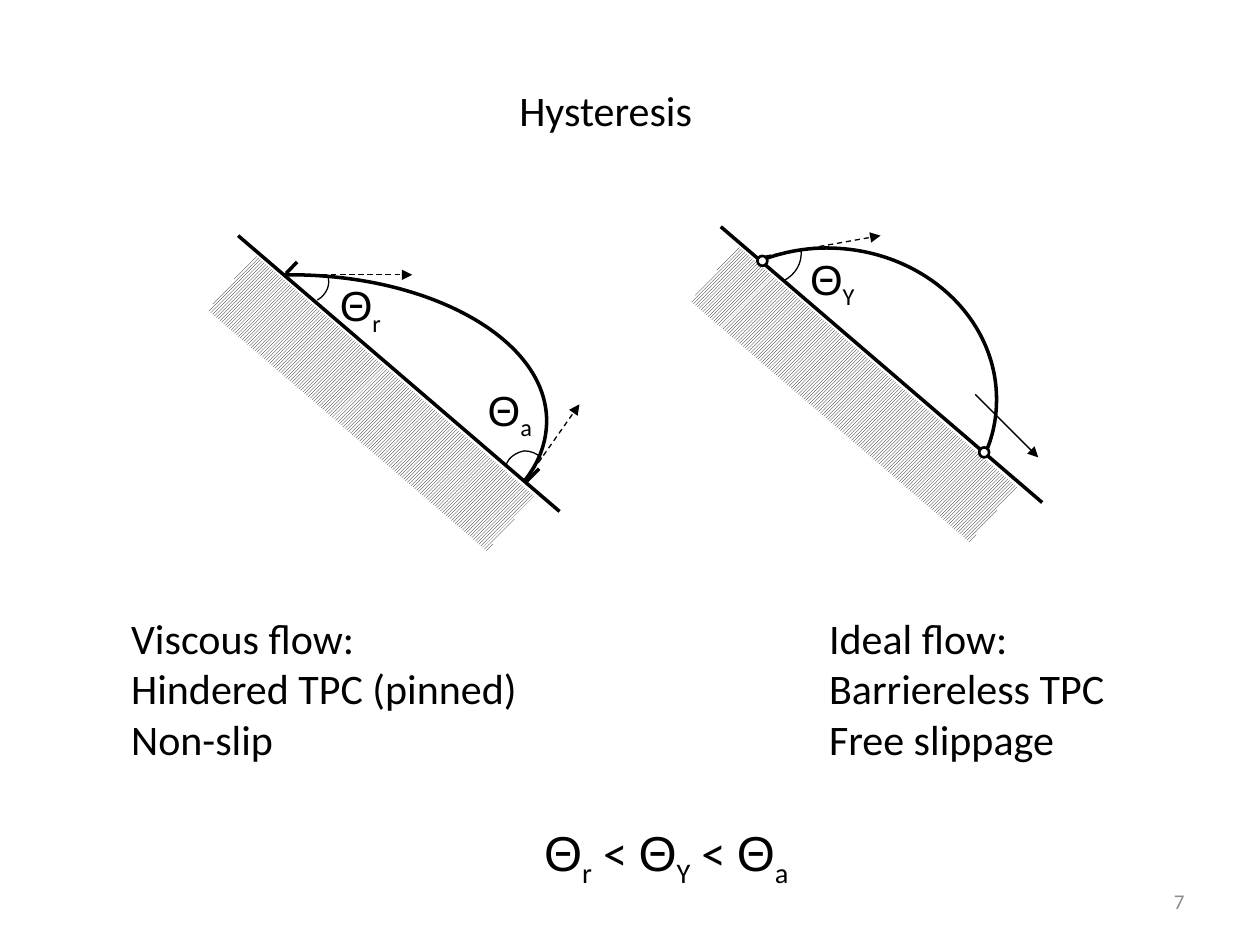
"""Build the contact angle hysteresis slide."""
from dataclasses import dataclass

from lxml.etree import SubElement
from pptx import Presentation
from pptx.dml.color import RGBColor
from pptx.enum.dml import MSO_LINE, MSO_PATTERN
from pptx.enum.shapes import MSO_CONNECTOR as CONN, MSO_SHAPE as SHAPE
from pptx.enum.text import MSO_ANCHOR as ANCHOR, MSO_AUTO_SIZE as FIT, PP_ALIGN as ALIGN
from pptx.oxml.ns import qn
from pptx.util import Cm, Pt

BLACK, WHITE, GREY = "000000", "FFFFFF", "8C8C8C"
THICK, THIN = 2, 0.75
RING = 0.2


@dataclass
class Line:
    start: tuple[float, float]
    end: tuple[float, float]
    width: float = THICK
    dashed: bool = False
    arrow: bool = False


@dataclass
class Curve:
    points: list[tuple[float, float]]
    width: float = THICK


@dataclass
class Label:
    sub: str
    x: float
    y: float


@dataclass
class Drop:
    shift: tuple[float, float]
    curves: list[Curve]
    lines: list[Line]
    labels: list[Label]
    rings: list[tuple[float, float]]


DROPS = [
    Drop(
        (0, 0),
        [
            Curve([(5.72, 5.54), (5.77, 5.54), (5.79, 5.54), (5.84, 5.54),
                   (8.71, 5.54), (11.02, 6.86), (11.02, 8.48),
                   (11.02, 8.92), (10.87, 9.32), (10.57, 9.7)]),
            Curve([(6.4, 6.05), (6.58, 5.94), (6.68, 5.74), (6.6, 5.54)], THIN),
            Curve([(10.21, 9.35), (10.26, 9.22), (10.41, 9.12), (10.57, 9.09),
                   (10.69, 9.09), (10.85, 9.14), (10.92, 9.25)], THIN),
        ],
        [
            Line((5.77, 5.51), (5.99, 5.28)),
            Line((10.62, 9.7), (10.87, 9.45)),
            Line((5.77, 5.54), (8.31, 5.54), THIN, True, True),
            Line((10.64, 9.63), (11.68, 8.15), THIN, True, True),
        ],
        [Label("r", 6.6, 5.51), Label("a", 9.58, 7.62)],
        [],
    ),
    Drop(
        (9.73, -0.18),
        [
            Curve([(19.84, 9.19), (20.02, 8.81), (20.09, 8.43), (20.09, 8.05),
                   (20.09, 6.38), (18.57, 5), (16.66, 5),
                   (16.23, 5), (15.8, 5.08), (15.39, 5.23)]),
            Curve([(15.8, 5.66), (16.03, 5.54), (16.18, 5.31), (16.15, 5.03)], THIN),
        ],
        [
            Line((15.44, 5.16), (17.75, 4.75), THIN, True, True),
            Line((19.66, 7.95), (20.93, 9.22), THIN, False, True),
        ],
        [Label("Y", 16.08, 4.98)],
        [(15.27, 5.16), (19.74, 9.02)],
    ),
]


def rgb(color: str) -> RGBColor:
    return RGBColor.from_string(color)


def box(*lengths: float) -> list[Cm]:
    return [Cm(v) for v in lengths]


def set_font(font, size: float, color: str = BLACK) -> None:
    font.name, font.size = "Calibri", Pt(size)
    font.color.rgb = rgb(color)


def set_line(sp, width: float) -> None:
    sp.line.color.rgb = rgb(BLACK)
    sp.line.width = Pt(width)


def draw_line(shapes, line: Line) -> None:
    sp = shapes.add_connector(CONN.STRAIGHT, *box(*line.start, *line.end))
    set_line(sp, line.width)
    if line.dashed:
        sp.line.dash_style = MSO_LINE.DASH
    if line.arrow:
        SubElement(sp.line._get_or_add_ln(), qn("a:tailEnd"), type="triangle")
    SubElement(sp._element.spPr, qn("a:effectLst"))


def draw_curve(shapes, curve: Curve) -> None:
    start, *rest = [box(*point) for point in curve.points]
    builder = shapes.build_freeform(*start)
    builder.add_line_segments(rest, close=False)
    sp = builder.convert_to_shape()
    outline = sp._element.find(".//" + qn("a:path"))
    steps = outline.findall(qn("a:lnTo"))
    for i in range(0, len(steps), 3):
        bezier = SubElement(outline, qn("a:cubicBezTo"))
        for step in steps[i:i + 3]:
            bezier.append(step[0])
            outline.remove(step)
    sp.fill.background()
    sp.shadow.inherit = False
    set_line(sp, curve.width)


def draw_surface(shapes, dx: float, dy: float) -> None:
    draw_line(shapes, Line((4.8 + dx, 4.75 + dy), (11.28 + dx, 10.31 + dy)))
    sp = shapes.add_shape(SHAPE.RECTANGLE, *box(3.76 + dx, 7.39 + dy, 7.44, 1.47))
    sp.rotation = 40.8
    sp.fill.patterned()
    sp.fill.pattern = MSO_PATTERN.LIGHT_UPWARD_DIAGONAL
    sp.fill.fore_color.rgb, sp.fill.back_color.rgb = rgb(BLACK), rgb(WHITE)
    sp.line.fill.background()
    sp.shadow.inherit = False


def draw_ring(shapes, x: float, y: float) -> None:
    sp = shapes.add_shape(SHAPE.OVAL, *box(x, y, RING, RING))
    sp.fill.solid()
    sp.fill.fore_color.rgb = rgb(WHITE)
    sp.shadow.inherit = False
    set_line(sp, 1.5)


def draw_thetas(shapes, place: list[Cm], subs: str, size: float) -> None:
    tf = shapes.add_textbox(*place).text_frame
    tf.word_wrap = True
    p = tf.paragraphs[0]
    set_font(p.font, size)
    for i, sub in enumerate(subs):
        if i:
            p.add_run().text = " < "
        r = p.add_run()
        r.text, r.font.name = "Θ", "Arial"
        r = p.add_run()
        r.text = sub
        r.font._element.set("baseline", "-25000")
    for r in p.runs:
        set_font_name = r.font.name or "Calibri"
        set_font(r.font, size)
        r.font.name = set_font_name


def draw_drop(s, drop: Drop) -> None:
    shapes = s.shapes.add_group_shape().shapes
    draw_surface(shapes, *drop.shift)
    for curve in drop.curves:
        draw_curve(shapes, curve)
    for ring in drop.rings:
        draw_ring(shapes, *ring)
    for line in drop.lines:
        draw_line(shapes, line)
    for label in drop.labels:
        draw_thetas(shapes, box(label.x, label.y, 1.7, 1.27), label.sub, 24)


def fill_text(sp, place: list[Cm], lines: list[str], align=ALIGN.LEFT,
              size: float = 24, color: str = BLACK) -> None:
    sp.left, sp.top, sp.width, sp.height = place
    tf = sp.text_frame
    tf.text = "\n".join(lines)
    tf.word_wrap, tf.auto_size = True, FIT.NONE
    for p in tf.paragraphs:
        p.alignment, p.space_before = align, Pt(0)
        set_font(p.font, size, color)
        pPr = p._p.get_or_add_pPr()
        pPr.set("marL", "0")
        pPr.set("indent", "0")
        pPr.insert_element_before(pPr.makeelement(qn("a:buNone")), "a:tabLst", "a:defRPr")


def main() -> None:
    prs = Presentation()
    prs.slide_width, prs.slide_height = box(25.4, 19.05)
    s = prs.slides.add_slide(prs.slide_layouts[3])
    title, viscous, ideal = s.placeholders
    fill_text(title, box(6.15, 1.57, 12.12, 1.27), ["Hysteresis"], ALIGN.CENTER)
    fill_text(viscous, box(2.39, 12.22, 9.93, 3.33),
              ["Viscous flow:", "Hindered TPC (pinned)", "Non-slip"])
    fill_text(ideal, box(16.46, 12.22, 6.15, 3.33),
              ["Ideal flow: Barriereless TPC", "Free slippage"])
    draw_thetas(s.shapes, box(10.72, 16.46, 6.78, 1.45), "rYa", 28)
    for drop in DROPS:
        draw_drop(s, drop)
    place = box(18.21, 17.65, 5.92, 1.02)
    number = s.shapes.add_textbox(*place)
    fill_text(number, place, ["7"], ALIGN.RIGHT, 12, GREY)
    number.text_frame.vertical_anchor = ANCHOR.MIDDLE
    prs.save("out.pptx")


if __name__ == "__main__":
    main()
